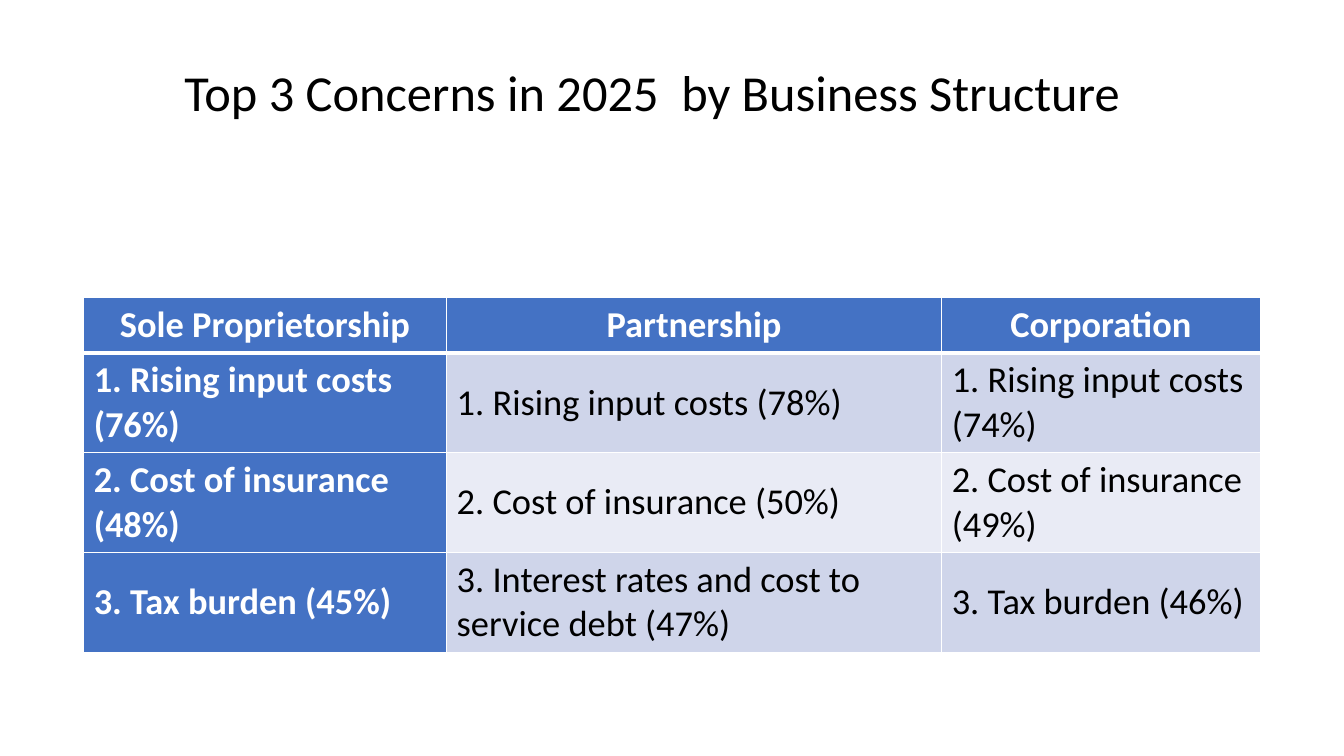
from lxml import etree
from pptx import Presentation
from pptx.dml.color import RGBColor
from pptx.enum import shapes, text
from pptx.oxml import ns
from pptx.util import Inches, Pt

COLORS = {
    "white": "FFFFFF",
    "black": "000000",
    "blue": "4472C4",
    "band_dark": "CFD5EA",
    "band_light": "E9EBF5",
}
SLIDE_WIDTH, SLIDE_HEIGHT = 13.33, 7.5
TITLE = "Top 3 Concerns in 2025  by Business Structure"
CONCERNS = [
    ["Sole Proprietorship", "Partnership", "Corporation"],
    ["1. Rising input costs (76%)", "1. Rising input costs (78%)",
     "1. Rising input costs (74%)"],
    ["2. Cost of insurance (48%)", "2. Cost of insurance (50%)",
     "2. Cost of insurance (49%)"],
    ["3. Tax burden (45%)", "3. Interest rates and cost to service debt (47%)",
     "3. Tax burden (46%)"],
]
COLUMN_WIDTHS = [3.6, 4.91, 3.16]
ROW_HEIGHTS = [0.55, 0.99, 0.99, 0.99]


def color(name):
    return RGBColor.from_string(COLORS[name])


def set_attributes(target, values):
    for name, value in values.items():
        setattr(target, name, value)


def fill_solid(target, name):
    target.fill.solid()
    target.fill.fore_color.rgb = color(name)


def write(paragraph, wording, size, color_name, bold=False):
    run = paragraph.add_run()
    run.text = wording
    set_attributes(run.font, {"name": "Calibri", "size": Pt(size), "bold": bold})
    run.font.color.rgb = color(color_name)


def add_border(cell, side, width):
    properties = cell._tc.get_or_add_tcPr()
    line = etree.SubElement(properties, ns.qn(f"a:ln{side}"), w=str(Pt(width)))
    fill = etree.SubElement(line, ns.qn("a:solidFill"))
    etree.SubElement(fill, ns.qn("a:srgbClr"), val=COLORS["white"])


def add_title(slide, left, top, width, height):
    # White band behind the title
    band = slide.shapes.add_shape(
        shapes.MSO_SHAPE.RECTANGLE,
        Inches(left), Inches(top), Inches(width), Inches(height))
    band.shadow.inherit = False
    fill_solid(band, "white")
    band.line.fill.background()

    # Title wording
    title = slide.shapes.add_textbox(
        Inches(left + 1.73), Inches(top + 0.27), Inches(9.65), Inches(1.35))
    set_attributes(title.text_frame, {
        "word_wrap": True, "vertical_anchor": text.MSO_ANCHOR.MIDDLE})
    paragraph = title.text_frame.paragraphs[0]
    paragraph.line_spacing = 0.9
    write(paragraph, TITLE, 36, "black")


def add_concerns(slide, left, top):
    table = slide.shapes.add_table(
        len(CONCERNS), len(COLUMN_WIDTHS), Inches(left), Inches(top),
        Inches(sum(COLUMN_WIDTHS)), Inches(sum(ROW_HEIGHTS))).table
    table.first_col = True
    for column, width in zip(table.columns, COLUMN_WIDTHS):
        column.width = Inches(width)
    for row, height in zip(table.rows, ROW_HEIGHTS):
        row.height = Inches(height)

    for r, concerns in enumerate(CONCERNS):
        for c, concern in enumerate(concerns):
            cell = table.cell(r, c)
            is_heading = r == 0 or c == 0
            set_attributes(cell, {
                "margin_left": Inches(0.1), "margin_right": Inches(0.1),
                "margin_top": 0, "margin_bottom": 0,
                "vertical_anchor": text.MSO_ANCHOR.MIDDLE})
            # A thick rule separates the header from the body
            for side in "LRTB":
                at_header_rule = (r, side) in ((0, "B"), (1, "T"))
                add_border(cell, side, 3 if at_header_rule else 1)
            band = "band_dark" if r % 2 else "band_light"
            fill_solid(cell, "blue" if is_heading else band)
            paragraph = cell.text_frame.paragraphs[0]
            paragraph.alignment = (
                text.PP_ALIGN.LEFT if r else text.PP_ALIGN.CENTER)
            write(paragraph, concern, 26,
                  "white" if is_heading else "black", is_heading)


def main():
    deck = Presentation()
    set_attributes(deck, {"slide_width": Inches(SLIDE_WIDTH),
                          "slide_height": Inches(SLIDE_HEIGHT)})
    slide = deck.slides.add_slide(deck.slide_layouts[6])
    add_title(slide, 0, 0, SLIDE_WIDTH, 1.86)
    add_concerns(slide, 0.83, 2.95)
    deck.save("out.pptx")


if __name__ == "__main__":
    main()
